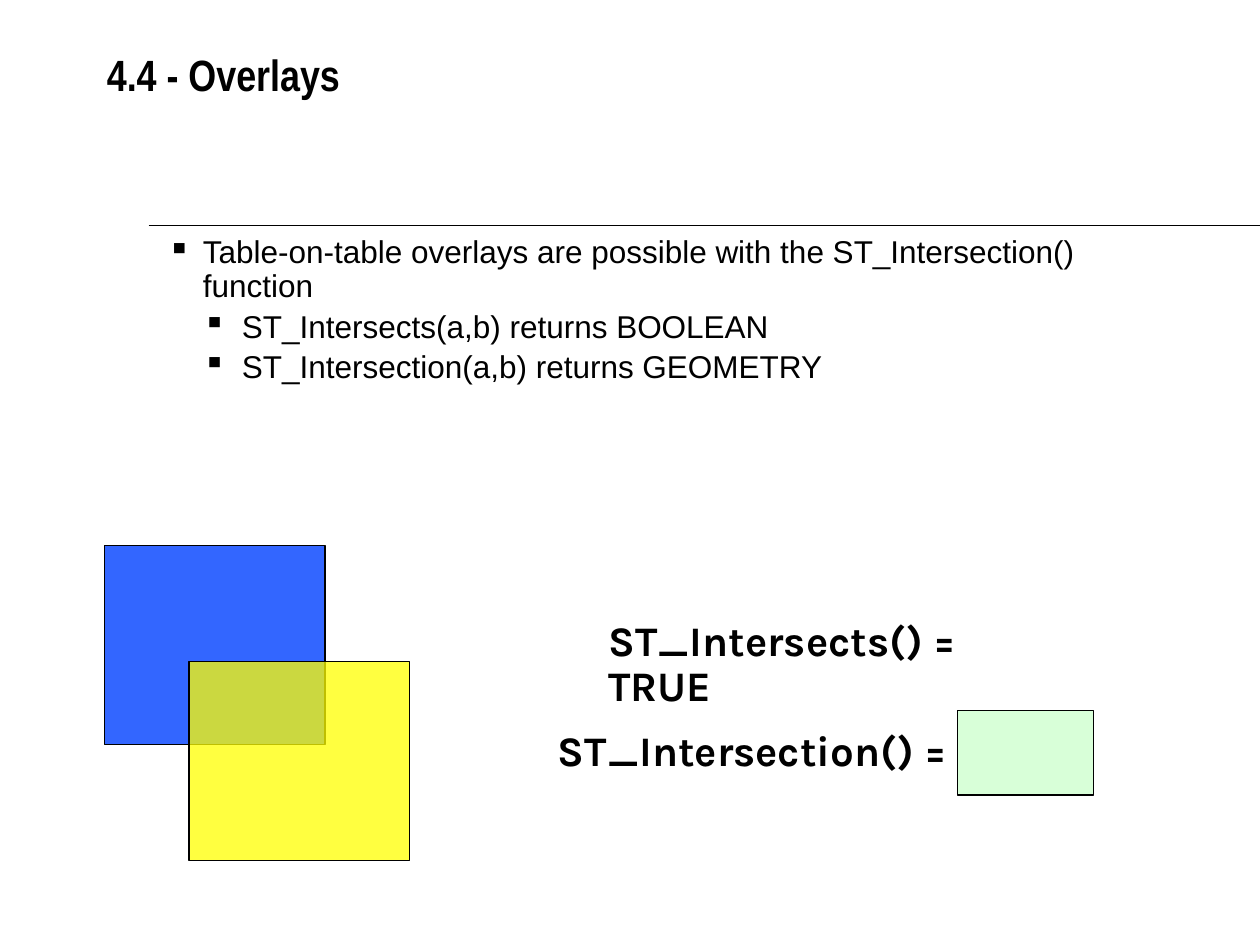
from lxml.etree import SubElement
from pptx import Presentation
from pptx.dml.color import RGBColor
from pptx.enum.shapes import MSO_CONNECTOR, MSO_SHAPE
from pptx.oxml.ns import qn
from pptx.util import Inches, Pt

COLORS = {
    "ink": "000000",
    "blue": "3366FF",
    "yellow": "FFFF00",
    "green": "CCFFCC",
}
TITLE_FONT = {"name": "Arial Narrow", "size": Pt(25), "bold": True}
BODY_FONT = {"name": "Arial", "size": Pt(18), "bold": False}
RESULT_FONT = {"name": "Karla", "size": Pt(24), "bold": True}

BULLETS = [
    (0, "Table-on-table overlays are possible with the ST_Intersection() function"),
    (1, "ST_Intersects(a,b) returns BOOLEAN"),
    (1, "ST_Intersection(a,b) returns GEOMETRY"),
]
INDENTS = [(0.28, -0.28), (0.59, -0.31)]  # left margin and hanging indent by level


def rgb(color):
    return RGBColor.from_string(COLORS[color])


def style(paragraph, font_format):
    for key, value in font_format.items():
        setattr(paragraph.font, key, value)
    paragraph.font.color.rgb = rgb("ink")


def add_frame(slide, left, top, width, height):
    """Add a wrapping text box and return its text frame."""
    box = slide.shapes.add_textbox(Inches(left), Inches(top), Inches(width), Inches(height))
    box.text_frame.word_wrap = True
    return box.text_frame


def add_label(slide, box, text, font_format, line_spacing=1.0):
    paragraph = add_frame(slide, *box).paragraphs[0]
    paragraph.text = text
    paragraph.line_spacing = line_spacing
    style(paragraph, font_format)


def add_rule(slide, left, top, width):
    rule = slide.shapes.add_connector(
        MSO_CONNECTOR.STRAIGHT, Inches(left), Inches(top), Inches(left + width), Inches(top))
    rule.line.color.rgb = rgb("ink")
    rule.line.width = Pt(1)
    SubElement(rule._element.spPr, qn("a:effectLst"))


def add_bullets(slide, left, top, width, height):
    frame = add_frame(slide, left, top, width, height)
    frame.margin_left = 0
    for index, (level, text) in enumerate(BULLETS):
        paragraph = frame.add_paragraph() if index else frame.paragraphs[0]
        paragraph.text = text
        paragraph.level = level
        paragraph.line_spacing = 0.9
        paragraph.space_before = Pt(3.6 if index else 0)
        margin, indent = INDENTS[level]
        properties = paragraph._p.get_or_add_pPr()
        properties.set("marL", str(Inches(margin)))
        properties.set("indent", str(Inches(indent)))
        SubElement(properties, qn("a:buChar"), char="▪")
        style(paragraph, BODY_FONT)


def add_region(slide, left, top, width, height, color, opacity=100):
    region = slide.shapes.add_shape(
        MSO_SHAPE.RECTANGLE, Inches(left), Inches(top), Inches(width), Inches(height))
    region.shadow.inherit = False
    region.fill.solid()
    region.fill.fore_color.rgb = rgb(color)
    region.line.color.rgb = rgb("ink")
    region.line.width = Pt(0.75)
    if opacity < 100:
        fill_color = region._element.spPr.find(qn("a:solidFill"))[0]
        SubElement(fill_color, qn("a:alpha"), val=str(opacity * 1000))


def add_overlap(slide, left, top, width, height):
    """Draw two equal rectangles, overlapping from corner to corner of the box."""
    side, rise = 1.75, 1.58
    add_region(slide, left, top, side, rise, "blue")
    add_region(slide, left + width - side, top + height - rise, side, rise, "yellow", 75)


def add_results(slide, left, top, width, height):
    """Place the two function results, with the shared area at the lower right."""
    area_width, area_height = 1.08, 0.67
    add_region(slide, left + width - area_width, top + height - area_height,
               area_width, area_height, "green", 75)
    add_label(slide, (left + 0.4, top, 3.77, 0.8), "ST_Intersects() = TRUE", RESULT_FONT, 0.9)
    add_label(slide, (left, top + 0.88, 3.35, 0.46), "ST_Intersection() =", RESULT_FONT, 0.9)


def main():
    presentation = Presentation()
    presentation.slide_width = Inches(10)
    presentation.slide_height = Inches(7.5)
    slide = presentation.slides.add_slide(presentation.slide_layouts[6])
    add_rule(slide, 1.18, 1.79, 8.82)
    add_label(slide, (0.75, 0.33, 8.5, 1.08), "4.4 - Overlays", TITLE_FONT)
    add_bullets(slide, 1.33, 1.83, 7.92, 3)
    add_overlap(slide, 0.83, 4.33, 2.42, 2.5)
    add_results(slide, 4.33, 4.87, 4.35, 1.44)
    presentation.save("out.pptx")


if __name__ == "__main__":
    main()
